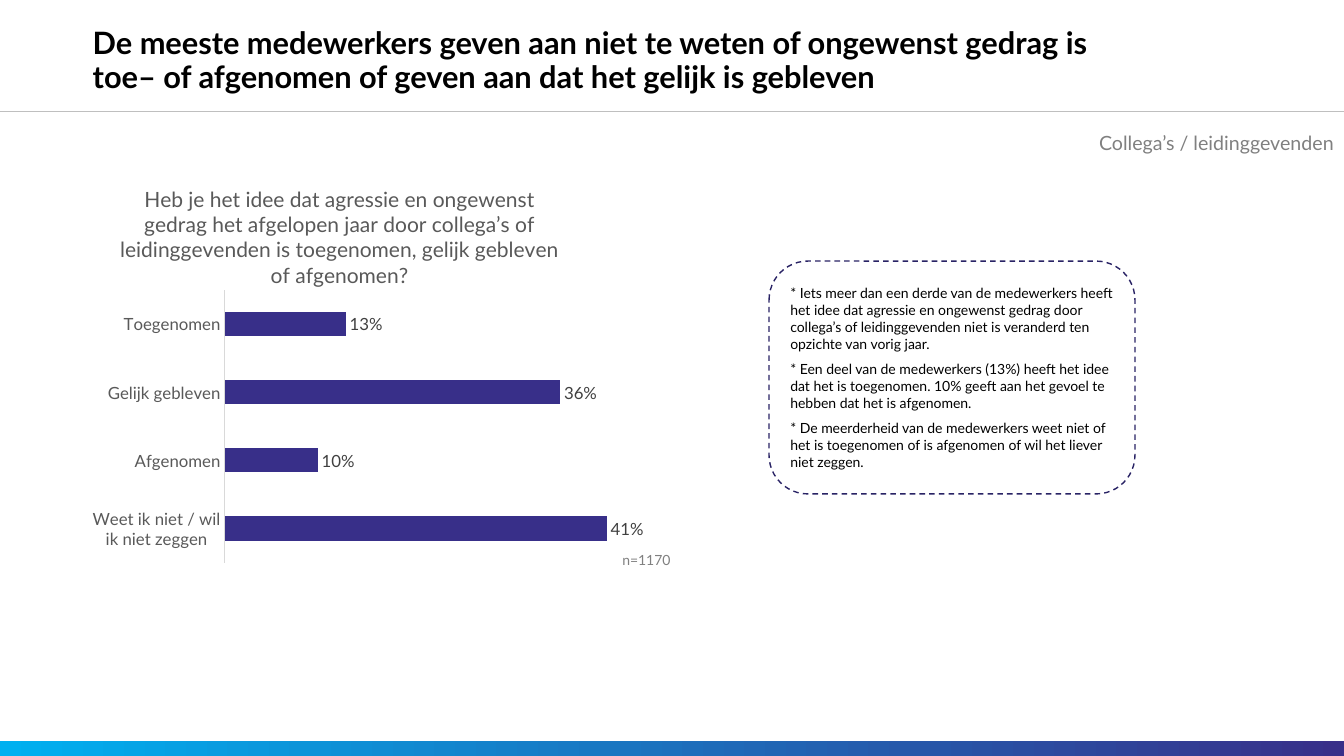
from dataclasses import dataclass
from typing import NamedTuple

from lxml.etree import SubElement
from pptx import Presentation
from pptx.chart.data import CategoryChartData
from pptx.dml.color import RGBColor
from pptx.enum.chart import XL_CHART_TYPE, XL_LABEL_POSITION, XL_TICK_MARK
from pptx.enum.dml import MSO_LINE
from pptx.enum.shapes import MSO_CONNECTOR, MSO_SHAPE
from pptx.enum.text import MSO_ANCHOR, MSO_AUTO_SIZE, PP_ALIGN
from pptx.oxml import parse_xml
from pptx.oxml.ns import nsdecls, qn
from pptx.util import Inches, Pt

COLUMNS, ROWS = 160, 90
SLIDE_WIDTH, SLIDE_HEIGHT = Inches(13.33), Inches(7.5)


@dataclass(frozen=True)
class Theme:
    font: str = "Lato"
    ink: str = "000000"
    muted: str = "808080"
    axis_text: str = "595959"
    label_text: str = "404040"
    axis_line: str = "D9D9D9"
    rule: str = "BFBFBF"
    indigo: str = "382F89"
    outline: str = "292365"
    sky: str = "00B0F0"
    heading_size: float = 22
    question_size: float = 15
    audience_size: float = 14
    chart_size: float = 12
    small_size: float = 10


THEME = Theme()


class Area(NamedTuple):
    column: float
    row: float
    columns: float
    rows: float

    def box(self) -> tuple[int, int, int, int]:
        return (
            round(SLIDE_WIDTH * self.column / COLUMNS),
            round(SLIDE_HEIGHT * self.row / ROWS),
            round(SLIDE_WIDTH * self.columns / COLUMNS),
            round(SLIDE_HEIGHT * self.rows / ROWS),
        )


@dataclass(frozen=True)
class Caption:
    text: str
    area: Area
    size: float


HEADING = (
    "De meeste medewerkers geven aan niet te weten of ongewenst gedrag is "
    "toe– of afgenomen of geven aan dat het gelijk is gebleven"
)
QUESTION = (
    "Heb je het idee dat agressie en ongewenst gedrag het afgelopen jaar door "
    "collega’s of leidinggevenden is toegenomen, gelijk gebleven of afgenomen?"
)
ANSWERS = {
    "Toegenomen": 0.13,
    "Gelijk gebleven": 0.36,
    "Afgenomen": 0.10,
    "Weet ik niet / wil ik niet zeggen": 0.41,
}
FINDINGS = [
    "* Iets meer dan een derde van de medewerkers heeft het idee dat agressie en "
    "ongewenst gedrag door collega’s of leidinggevenden niet is veranderd ten "
    "opzichte van vorig jaar.",
    "* Een deel van de medewerkers (13%) heeft het idee dat het is toegenomen. "
    "10% geeft aan het gevoel te hebben dat het is afgenomen.",
    "* De meerderheid van de medewerkers weet niet of het is toegenomen of is "
    "afgenomen of wil het liever niet zeggen.",
]
CAPTIONS = [
    Caption("Collega’s / leidinggevenden", Area(126.5, 13.56, 33.5, 4.92), THEME.audience_size),
    Caption("n=1170", Area(72.6, 64.08, 8.4, 3.84), THEME.small_size),
]


def rgb(code: str) -> RGBColor:
    return RGBColor.from_string(code)


def style_font(font, size: float, color: str, bold: bool = False) -> None:
    font.name = THEME.font
    font.size = Pt(size)
    font.bold = bold
    font.color.rgb = rgb(color)


def write_text(frame, paragraphs: list[str], *, size: float, color: str = THEME.ink,
               bold: bool = False, align=PP_ALIGN.LEFT, line_spacing: float = 1.0,
               gap: float = 0) -> None:
    frame.word_wrap = True
    for index, wording in enumerate(paragraphs):
        paragraph = frame.add_paragraph() if index else frame.paragraphs[0]
        paragraph.alignment = align
        paragraph.line_spacing = line_spacing
        if index and gap:
            paragraph.space_before = Pt(gap)
        run = paragraph.add_run()
        run.text = wording
        style_font(run.font, size, color, bold)


def add_heading(slide) -> None:
    heading = slide.shapes.title
    heading.left, heading.top, heading.width, heading.height = Area(11.04, 3.48, 120.72, 7.8).box()
    frame = heading.text_frame
    frame.margin_left = frame.margin_top = frame.margin_right = frame.margin_bottom = 0
    frame.vertical_anchor = MSO_ANCHOR.BOTTOM
    frame.auto_size = MSO_AUTO_SIZE.NONE
    write_text(frame, [HEADING], size=THEME.heading_size, bold=True, line_spacing=0.9)


def add_frame(slide) -> None:
    footer = slide.shapes.add_shape(MSO_SHAPE.RECTANGLE, *Area(0, 88.2, COLUMNS, 1.8).box())
    footer.shadow.inherit = False
    footer.line.fill.background()
    footer.fill.gradient()
    footer.fill.gradient_angle = 0
    for stop, color in zip(footer.fill.gradient_stops, (THEME.sky, THEME.indigo)):
        stop.color.rgb = rgb(color)
    left, top, width, _ = Area(0, 13.2, COLUMNS, 0).box()
    rule = slide.shapes.add_connector(MSO_CONNECTOR.STRAIGHT, left, top, left + width, top)
    rule.line.color.rgb = rgb(THEME.rule)
    rule.line.width = Pt(0.5)
    SubElement(rule.element.spPr, qn("a:effectLst"))


def add_caption(slide, caption: Caption) -> None:
    frame = slide.shapes.add_textbox(*caption.area.box()).text_frame
    frame.auto_size = MSO_AUTO_SIZE.SHAPE_TO_FIT_TEXT
    write_text(frame, [caption.text], size=caption.size, color=THEME.muted,
               align=PP_ALIGN.RIGHT, line_spacing=1.5)


def place_chart_part(part, index: int, target: str = "", **shares: float) -> None:
    for layout in part.findall(qn("c:layout")):
        part.remove(layout)
    modes = "".join(f'<c:{axis}Mode val="edge"/>' for axis in "xy")
    sizes = "".join(f'<c:{key} val="{share}"/>' for key, share in shares.items())
    part.insert(index, parse_xml(
        f'<c:layout {nsdecls("c")}><c:manualLayout>{target}{modes}{sizes}'
        "</c:manualLayout></c:layout>"))


def add_answers(slide) -> None:
    answers = CategoryChartData(number_format="0%")
    answers.categories = list(ANSWERS)
    answers.add_series("Series 1", list(ANSWERS.values()))
    chart = slide.shapes.add_chart(
        XL_CHART_TYPE.BAR_CLUSTERED, *Area(9.72, 18.48, 68.88, 49.56).box(), answers).chart
    style_font(chart.font, THEME.small_size, THEME.ink)
    chart.has_legend = False
    chart.has_title = True
    write_text(chart.chart_title.text_frame, [QUESTION], size=THEME.question_size,
               color=THEME.axis_text, align=PP_ALIGN.CENTER)
    place_chart_part(chart.chart_title.element, 1, x=0.06, y=0.06)
    place_chart_part(chart.element.find(".//" + qn("c:plotArea")), 0,
                     '<c:layoutTarget val="inner"/>', x=0.247, y=0.324, w=0.725, h=0.655)

    categories = chart.category_axis
    categories.reverse_order = True
    categories.major_tick_mark = categories.minor_tick_mark = XL_TICK_MARK.NONE
    categories.format.line.color.rgb = rgb(THEME.axis_line)
    categories.format.line.width = Pt(0.75)
    style_font(categories.tick_labels.font, THEME.chart_size, THEME.axis_text)

    shares = chart.value_axis
    shares.visible = shares.has_major_gridlines = False
    shares.minimum_scale, shares.maximum_scale = 0, 0.45
    shares.tick_labels.number_format = "0%"
    shares.tick_labels.number_format_is_linked = False

    plot = chart.plots[0]
    plot.gap_width = 182
    plot.vary_by_categories = False
    bars = plot.series[0]
    bars.format.fill.solid()
    bars.format.fill.fore_color.rgb = rgb(THEME.indigo)
    labels = bars.data_labels
    labels.show_value = True
    labels.position = XL_LABEL_POSITION.OUTSIDE_END
    labels.number_format = "0%"
    labels.number_format_is_linked = False
    style_font(labels.font, THEME.chart_size, THEME.label_text)


def add_findings(slide) -> None:
    callout = slide.shapes.add_shape(
        MSO_SHAPE.ROUNDED_RECTANGLE, *Area(91.56, 31.08, 43.56, 27.72).box())
    callout.shadow.inherit = False
    callout.fill.background()
    callout.line.color.rgb = rgb(THEME.outline)
    callout.line.width = Pt(1)
    callout.line.dash_style = MSO_LINE.DASH
    callout.text_frame.vertical_anchor = MSO_ANCHOR.MIDDLE
    write_text(callout.text_frame, FINDINGS, size=THEME.small_size, gap=6)


def main() -> None:
    presentation = Presentation()
    presentation.slide_width, presentation.slide_height = SLIDE_WIDTH, SLIDE_HEIGHT
    slide = presentation.slides.add_slide(presentation.slide_layouts[5])
    add_frame(slide)
    add_heading(slide)
    add_answers(slide)
    add_findings(slide)
    for caption in CAPTIONS:
        add_caption(slide, caption)
    presentation.save("out.pptx")


if __name__ == "__main__":
    main()
